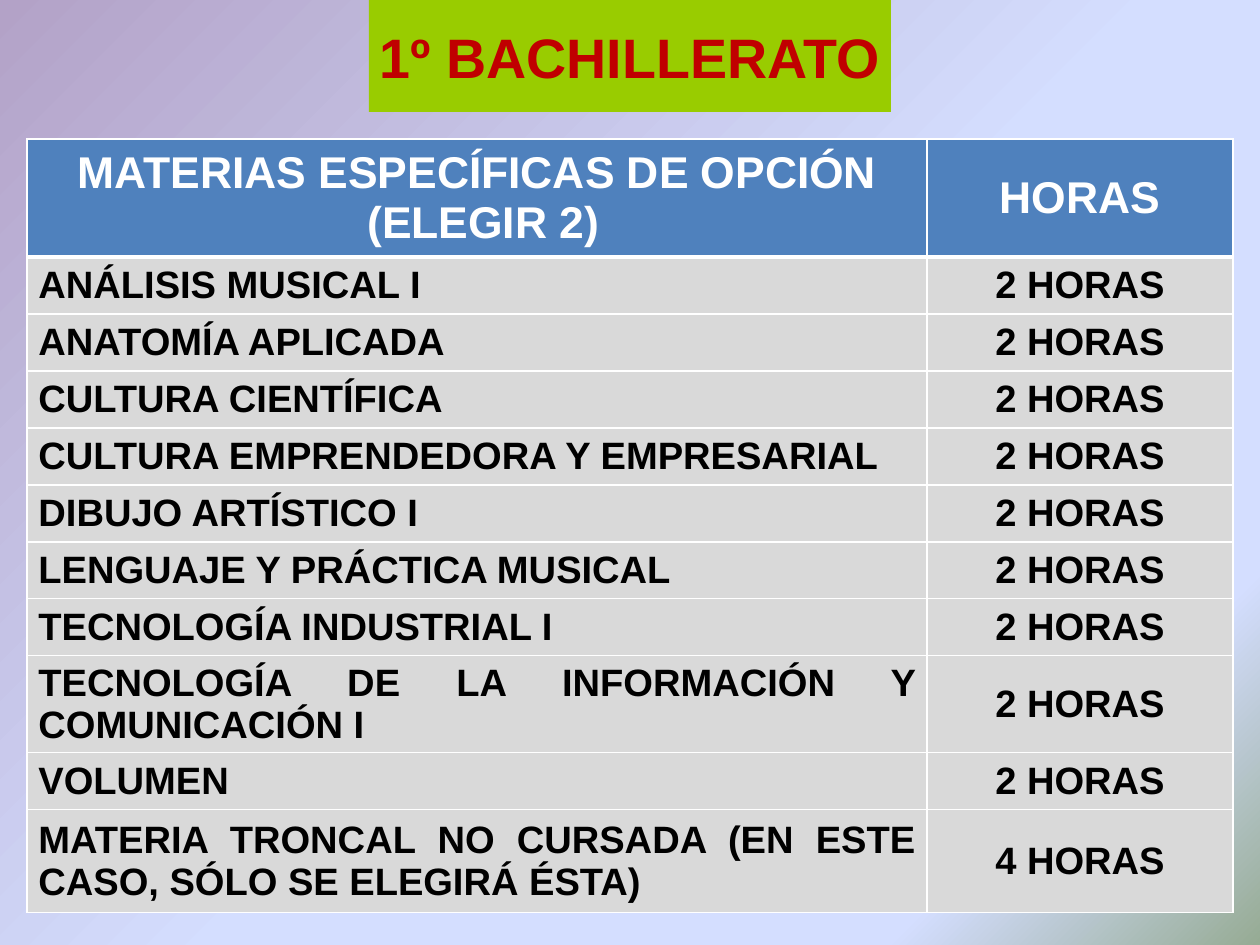
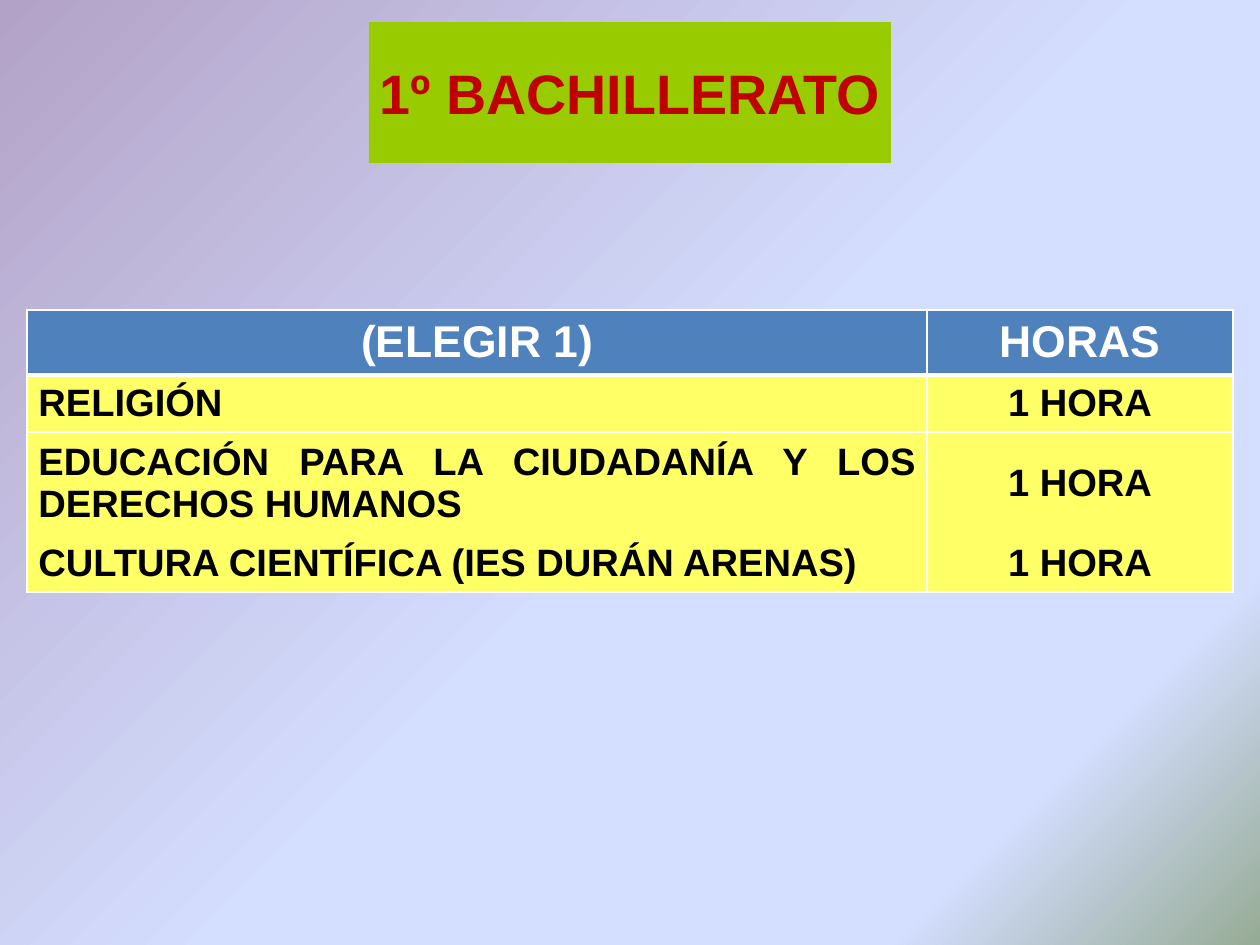
from pptx import Presentation
from pptx.dml.color import RGBColor
from pptx.enum.shapes import MSO_SHAPE
from pptx.enum.text import MSO_ANCHOR, PP_ALIGN
from pptx.oxml.ns import qn
from pptx.util import Pt
from lxml import etree

RECTANGLE = MSO_SHAPE.RECTANGLE
MIDDLE = MSO_ANCHOR.MIDDLE
CENTER = PP_ALIGN.CENTER
JUSTIFY = PP_ALIGN.JUSTIFY

EMU_PER_PX = 8000
WIDTH, HEIGHT = 1260, 945
FONT = "Arial"
COLORS = {
    "title_band": "99CC00",
    "title": "C00000",
    "header": "4F81BD",
    "white": "FFFFFF",
    "black": "000000",
    "gray": "D9D9D9",
    "yellow": "FFFF66",
}
BACKGROUND_STOPS = [(0, "B3A2C7"), (53, "D4DEFF"), (83, "D4DEFF"), (100, "96AB94")]
TITLE = "1º BACHILLERATO"
COLUMNS = (900, 306)
ROW, DOUBLE_ROW = 57, 103


def px(value):
    return value * EMU_PER_PX


def rgb(name):
    return RGBColor.from_string(COLORS[name])


def write(frame, text, size, color, align):
    for index, line in enumerate(text.split("\n")):
        para = frame.add_paragraph() if index else frame.paragraphs[0]
        para.alignment = align
        span = para.add_run()
        span.text = line
        span.font.name = FONT
        span.font.size = Pt(size)
        span.font.bold = True
        span.font.color.rgb = rgb(color)


class Deck:
    def __init__(self):
        self.deck = Presentation()
        self.deck.slide_width = px(WIDTH)
        self.deck.slide_height = px(HEIGHT)
        self.page = None
        self.paint_background()

    def paint_background(self):
        master = self.deck.slide_master
        fill = master.background.fill
        fill.gradient()
        fill.gradient_angle = 315
        stops = master.element.find(".//" + qn("a:gsLst"))
        for stop in list(stops):
            stops.remove(stop)
        for position, color in BACKGROUND_STOPS:
            stop = etree.SubElement(stops, qn("a:gs"), pos=str(position * 1000))
            etree.SubElement(stop, qn("a:srgbClr"), val=color)

    def add_page(self):
        self.page = self.deck.slides.add_slide(self.deck.slide_layouts[6])

    def add_title(self, top, height):
        box = self.page.shapes.add_shape(RECTANGLE, px(369), px(top), px(522), px(height))
        box.shadow.inherit = False
        box.fill.solid()
        box.fill.fore_color.rgb = rgb("title_band")
        box.line.fill.background()
        frame = box.text_frame
        frame.word_wrap = True
        frame.vertical_anchor = MIDDLE
        frame.margin_left = frame.margin_right = 0
        frame.margin_top = frame.margin_bottom = 0
        write(frame, TITLE, size=35, color="title", align=CENTER)

    def add_border(self, cell, side, width):
        properties = cell._tc.get_or_add_tcPr()
        line = etree.SubElement(properties, qn("a:ln" + side), w=str(Pt(width)))
        if width:
            fill = etree.SubElement(line, qn("a:solidFill"))
            etree.SubElement(fill, qn("a:srgbClr"), val=COLORS["white"])
        else:
            etree.SubElement(line, qn("a:noFill"))

    def add_table(self, top, heights, rows, fill, unruled=()):
        frame = self.page.shapes.add_table(
            len(rows), len(COLUMNS), px(27), px(top), px(sum(COLUMNS)), px(sum(heights)))
        table = frame.table
        table.horz_banding = False
        for column, width in zip(table.columns, COLUMNS):
            column.width = px(width)
        rules = [1, 3] + [1] * (len(rows) - 1)
        for index in unruled:
            rules[index] = 0
        for i, (height, texts) in enumerate(zip(heights, rows)):
            table.rows[i].height = px(height)
            header = i == 0
            for j, text in enumerate(texts):
                cell = table.cell(i, j)
                cell.vertical_anchor = MIDDLE
                for side, width in zip("LRTB", (1, 1, rules[i], rules[i + 1])):
                    self.add_border(cell, side, width)
                cell.fill.solid()
                cell.fill.fore_color.rgb = rgb("header" if header else fill)
                write(cell.text_frame, text,
                      size=28 if header else 24,
                      color="white" if header else "black",
                      align=CENTER if header or j else JUSTIFY)

    def save(self):
        self.deck.save("out.pptx")


def main():
    deck = Deck()

    deck.add_page()
    deck.add_title(top=0, height=112)
    subjects = [
        "ANÁLISIS MUSICAL I",
        "ANATOMÍA APLICADA",
        "CULTURA CIENTÍFICA",
        "CULTURA EMPRENDEDORA Y EMPRESARIAL",
        "DIBUJO ARTÍSTICO I",
        "LENGUAJE Y PRÁCTICA MUSICAL",
        "TECNOLOGÍA INDUSTRIAL I",
        "TECNOLOGÍA DE LA INFORMACIÓN Y COMUNICACIÓN I",
        "VOLUMEN",
    ]
    deck.add_table(
        top=139,
        heights=[118] + [ROW] * 7 + [97, ROW, DOUBLE_ROW],
        rows=[("MATERIAS ESPECÍFICAS DE OPCIÓN\n (ELEGIR 2)", "HORAS")]
        + [(subject, "2 HORAS") for subject in subjects]
        + [("MATERIA TRONCAL NO CURSADA (EN ESTE CASO, SÓLO SE ELEGIRÁ ÉSTA)", "4 HORAS")],
        fill="gray")

    deck.add_page()
    deck.add_title(top=22, height=141)
    choices = [
        "RELIGIÓN",
        "EDUCACIÓN PARA LA CIUDADANÍA Y LOS DERECHOS HUMANOS",
        "CULTURA CIENTÍFICA (IES DURÁN ARENAS)",
    ]
    deck.add_table(
        top=310,
        heights=[65, ROW, DOUBLE_ROW, ROW],
        rows=[("(ELEGIR 1)", "HORAS")] + [(choice, "1 HORA") for choice in choices],
        fill="yellow",
        unruled=[3])

    deck.save()


if __name__ == "__main__":
    main()
